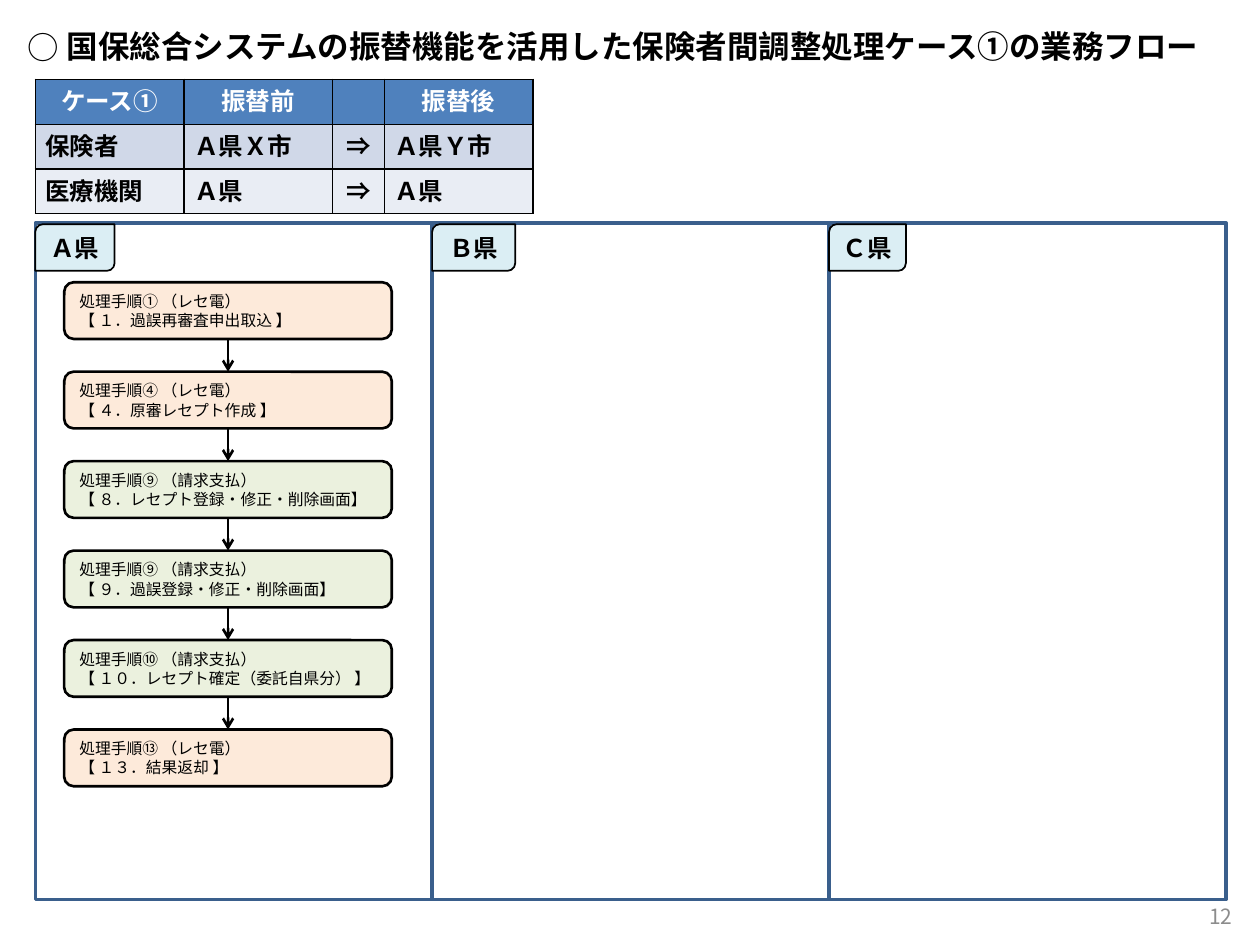
"""Build the business flow slide for insurer adjustment case 1."""
from typing import NamedTuple

from lxml import etree
from pptx import Presentation
from pptx import util as u
from pptx.dml.color import RGBColor
from pptx.enum import shapes, text
from pptx.oxml import ns

FONT = "Noto Sans CJK JP"
BLACK = RGBColor(0x00, 0x00, 0x00)
WHITE = RGBColor(0xFF, 0xFF, 0xFF)
GREY = RGBColor(0x8C, 0x8C, 0x8C)
PANEL_LINE = RGBColor(0x3A, 0x5F, 0x8C)
LABEL_FILL = RGBColor(0xDB, 0xEE, 0xF4)
CLAIMS = RGBColor(0xFD, 0xEA, 0xDA)
PAYMENT = RGBColor(0xEB, 0xF1, 0xDE)
HEADER = RGBColor(0x4F, 0x81, 0xBD)
BANDS = (HEADER, RGBColor(0xD0, 0xD8, 0xE8), RGBColor(0xE9, 0xED, 0xF4))

LEFT, CENTER, RIGHT = text.PP_ALIGN.LEFT, text.PP_ALIGN.CENTER, text.PP_ALIGN.RIGHT
MIDDLE = text.MSO_ANCHOR.MIDDLE
KIND = shapes.MSO_SHAPE
PANEL_LEFT, PANEL_TOP, PANEL_W, PANEL_H = 0.28, 1.77, 3.15, 5.37
STEP_LEFT, STEP_TOP, STEP_W, STEP_H, STEP_PITCH = 0.51, 2.24, 2.6, 0.45, 0.71


class Prefecture(NamedTuple):
    name: str
    label_width: float
    inset: float


class Step(NamedTuple):
    heading: str
    task: str
    fill: RGBColor


PREFECTURES = (
    Prefecture("Ａ県", 0.63, 0.1),
    Prefecture("Ｂ県", 0.66, 0.1),
    Prefecture("Ｃ県", 0.61, 0.04),
)
STEPS = (
    Step("処理手順① （レセ電）", "【 １．過誤再審査申出取込 】", CLAIMS),
    Step("処理手順④ （レセ電）", "【 ４．原審レセプト作成 】", CLAIMS),
    Step("処理手順⑨ （請求支払）", "【 ８．レセプト登録・修正・削除画面】", PAYMENT),
    Step("処理手順⑨ （請求支払）", "【 ９．過誤登録・修正・削除画面】", PAYMENT),
    Step("処理手順⑩ （請求支払）", "【 １０．レセプト確定（委託自県分） 】", PAYMENT),
    Step("処理手順⑬ （レセ電）", "【 １３．結果返却 】", CLAIMS),
)
CASE_ROWS = (
    ("ケース①", "振替前", "", "振替後"),
    ("保険者", "Ａ県Ｘ市", "⇒", "Ａ県Ｙ市"),
    ("医療機関", "Ａ県", "⇒", "Ａ県"),
)
CASE_COLUMNS = (1.18, 1.18, 0.41, 1.18)


def write(tf, lines, size, color=BLACK, bold=False, align=LEFT, spacing=None):
    """Write the lines as formatted paragraphs."""
    for i, line in enumerate(lines):
        p = tf.add_paragraph() if i else tf.paragraphs[0]
        p.alignment = align
        if spacing:
            p.line_spacing = u.Pt(spacing)
        r = p.add_run()
        r.text = line
        r.font.color.rgb = color
        for name, value in {"size": u.Pt(size), "bold": bold, "name": FONT}.items():
            setattr(r.font, name, value)
        r.font._element.find(ns.qn("a:latin")).addnext(
            r.font._element.makeelement(ns.qn("a:ea"), {"typeface": FONT}))


def add_box(s, kind, at, line: RGBColor, width: float, fill=None):
    """Add an outlined preset shape, filled when a colour is given."""
    sp = s.shapes.add_shape(kind, *map(u.Inches, at))
    sp.shadow.inherit = False
    sp.line.color.rgb = line
    sp.line.width = u.Pt(width)
    if fill is None:
        sp.fill.background()
    else:
        sp.fill.solid()
        sp.fill.fore_color.rgb = fill
    sp.text_frame.word_wrap = True
    sp.text_frame.vertical_anchor = MIDDLE
    return sp


def add_title(s) -> None:
    """Fill the title placeholder as a bulleted heading."""
    sp = s.shapes.title
    frame = {"left": 0.12, "top": 0.13, "width": 9.76, "height": 0.47}
    for name, value in frame.items():
        setattr(sp, name, u.Inches(value))
    tf = sp.text_frame
    tf.vertical_anchor = MIDDLE
    write(tf, ["国保総合システムの振替機能を活用した保険者間調整処理ケース①の業務フロー"], 18, bold=True)
    pPr = tf.paragraphs[0]._p.get_or_add_pPr()
    pPr.set("marL", str(u.Inches(0.31)))
    pPr.set("indent", str(-u.Inches(0.31)))
    etree.SubElement(pPr, ns.qn("a:buFont"), typeface=FONT)
    etree.SubElement(pPr, ns.qn("a:buChar"), char="○")


def border(cell) -> None:
    """Draw a thin black line on each side of the cell."""
    tcPr = cell._tc.get_or_add_tcPr()
    for i, side in enumerate(("lnL", "lnR", "lnT", "lnB")):
        ln = etree.Element(ns.qn(f"a:{side}"), w=str(u.Pt(1)))
        fill = etree.SubElement(ln, ns.qn("a:solidFill"))
        etree.SubElement(fill, ns.qn("a:srgbClr"), val=str(BLACK))
        tcPr.insert(i, ln)


def add_case_table(s) -> None:
    """Add the table of the case before and after the transfer."""
    at = map(u.Inches, (0.28, 0.63, sum(CASE_COLUMNS), 1.06))
    table = s.shapes.add_table(len(CASE_ROWS), len(CASE_COLUMNS), *at).table
    for column, width in zip(table.columns, CASE_COLUMNS):
        column.width = u.Inches(width)
    margins = {"margin_left": 0.08, "margin_right": 0.08, "margin_top": 0.04, "margin_bottom": 0.04}
    for i, row in enumerate(CASE_ROWS):
        for j, words in enumerate(row):
            cell = table.cell(i, j)
            for name, value in margins.items():
                setattr(cell, name, u.Inches(value))
            cell.vertical_anchor = MIDDLE
            cell.fill.solid()
            cell.fill.fore_color.rgb = BANDS[i]
            border(cell)
            write(cell.text_frame, [words], 14, BLACK if i else WHITE, True,
                  CENTER if i == 0 or j == 2 else LEFT, 18)


def add_panel(s, i: int, prefecture: Prefecture) -> None:
    """Add the panel of a prefecture with its label."""
    left = PANEL_LEFT + i * PANEL_W
    add_box(s, KIND.RECTANGLE, (left, PANEL_TOP, PANEL_W, PANEL_H), PANEL_LINE, 2)
    at = (left, PANEL_TOP + 0.01, prefecture.label_width, 0.37)
    sp = add_box(s, KIND.ROUND_2_DIAG_RECTANGLE, at, BLACK, 1, LABEL_FILL)
    tf = sp.text_frame
    tf.margin_left = tf.margin_right = u.Inches(prefecture.inset)
    write(tf, [prefecture.name], 14, bold=True, align=CENTER)


def add_step(s, i: int, step: Step):
    """Add one step of the flow."""
    at = (STEP_LEFT, STEP_TOP + i * STEP_PITCH, STEP_W, STEP_H)
    sp = add_box(s, KIND.ROUNDED_RECTANGLE, at, BLACK, 1.5, step.fill)
    write(sp.text_frame, [step.heading, step.task], 9, spacing=11)
    return sp


def join(s, upper, lower) -> None:
    """Join two steps with an arrow."""
    c = s.shapes.add_connector(shapes.MSO_CONNECTOR.STRAIGHT, 0, 0, 0, 0)
    c.begin_connect(upper, 2)
    c.end_connect(lower, 0)
    c.line.color.rgb = BLACK
    c.line.width = u.Pt(1.5)
    etree.SubElement(c.line._get_or_add_ln(), ns.qn("a:tailEnd"), type="arrow")
    etree.SubElement(c._element.spPr, ns.qn("a:effectLst"))


def main() -> None:
    """Build and save the slide."""
    prs = Presentation()
    prs.slide_width, prs.slide_height = u.Inches(10), u.Inches(7.5)
    s = prs.slides.add_slide(prs.slide_layouts[5])
    add_title(s)
    add_case_table(s)
    for i, prefecture in enumerate(PREFECTURES):
        add_panel(s, i, prefecture)
    boxes = [add_step(s, i, step) for i, step in enumerate(STEPS)]
    for upper, lower in zip(boxes, boxes[1:]):
        join(s, upper, lower)
    tf = s.shapes.add_textbox(*map(u.Inches, (7.55, 7.07, 2.33, 0.4))).text_frame
    tf.word_wrap = True
    tf.vertical_anchor = MIDDLE
    write(tf, ["12"], 12, GREY, align=RIGHT)
    prs.save("out.pptx")


if __name__ == "__main__":
    main()
